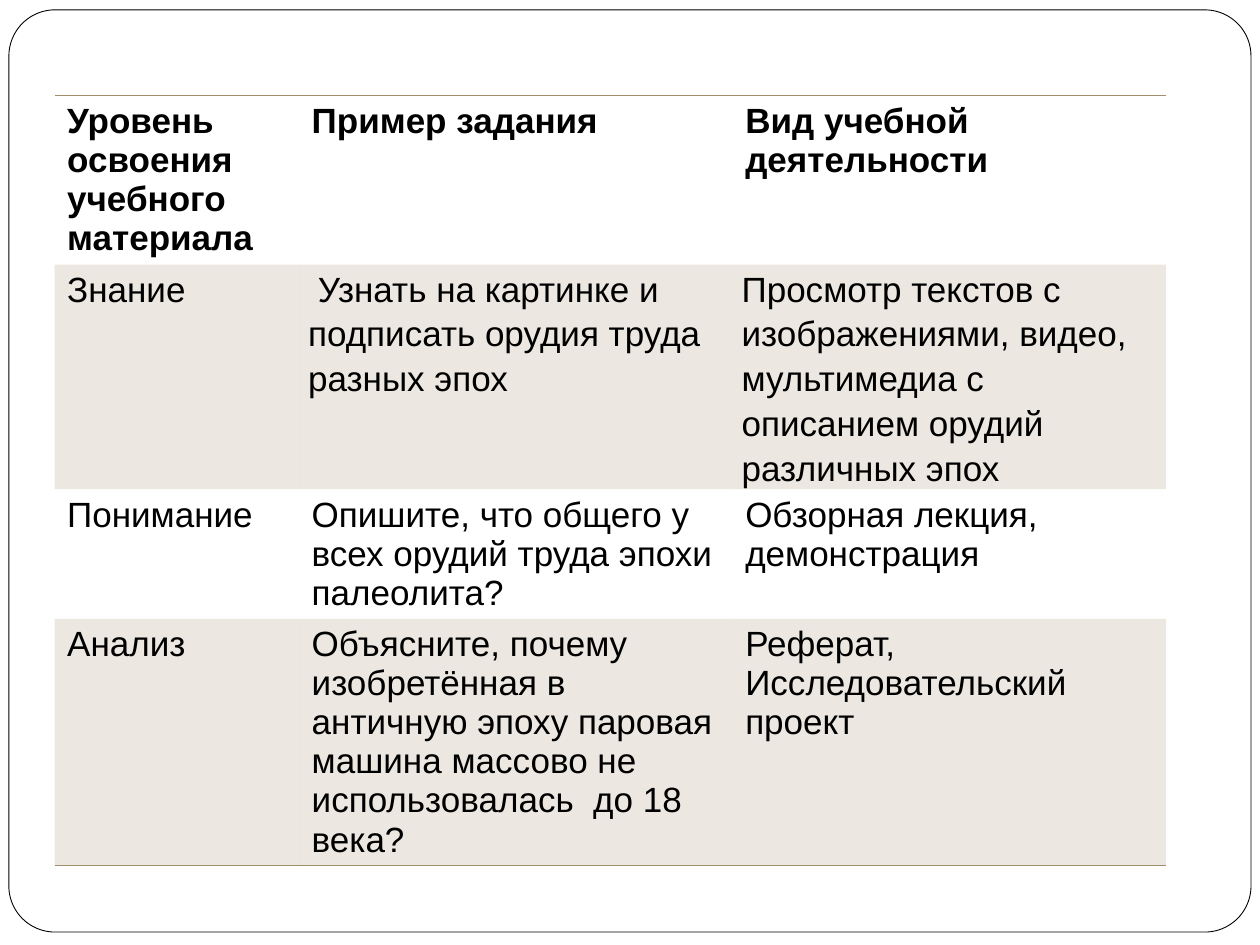
"""Build a slide with a table of learning levels, sample tasks and activities."""
import dataclasses

import pptx
import pptx.dml.color
import pptx.enum.shapes
import pptx.oxml
import pptx.oxml.ns
import pptx.util

Cm = pptx.util.Cm
Pt = pptx.util.Pt


@dataclasses.dataclass(frozen=True)
class Theme:
    paper: str = "FFFFFF"
    ink: str = "000000"
    accent: str = "A28E6A"
    band_opacity: int = 20
    font: str = "Arial"
    text_size: int = 20
    frame_line: float = 0.5
    rule_line: float = 1


class SlideBuilder:
    def __init__(self, prs, theme):
        self.theme = theme
        self.slide = prs.slides.add_slide(prs.slide_layouts[6])

    def color(self, value):
        return pptx.dml.color.RGBColor.from_string(value)

    def frame(self, left, top, width, height, radius):
        sp = self.slide.shapes.add_shape(
            pptx.enum.shapes.MSO_SHAPE.ROUNDED_RECTANGLE,
            Cm(left), Cm(top), Cm(width), Cm(height))
        sp.adjustments[0] = radius
        sp.shadow.inherit = False
        sp.fill.solid()
        sp.fill.fore_color.rgb = self.color(self.theme.paper)
        sp.line.color.rgb = self.color(self.theme.ink)
        sp.line.width = Pt(self.theme.frame_line)

    def table(self, left, top, height, widths, heights, rows):
        gf = self.slide.shapes.add_table(
            len(rows), len(widths), Cm(left), Cm(top), Cm(sum(widths)), Cm(height))
        table = gf.table
        table.first_row = table.horz_banding = False
        for column, width in zip(table.columns, widths):
            column.width = Cm(width)
        for row, row_height in zip(table.rows, heights):
            row.height = Cm(row_height)
        gf.height = Cm(height)
        last = len(rows) - 1
        for i, texts in enumerate(rows):
            for j, text in enumerate(texts):
                cell = table.cell(i, j)
                self.cell_text(cell, text, bold=i == 0)
                self.cell_fill(cell, banded=i % 2 == 1)
                self.cell_borders(cell, {"T": i == 0, "B": i in (0, last),
                                         "L": False, "R": False})
        return table

    def cell_text(self, cell, text, bold):
        cell.text_frame.text = text
        for p in cell.text_frame.paragraphs:
            p.font.name = self.theme.font
            p.font.size = Pt(self.theme.text_size)
            p.font.bold = bold
            p.font.color.rgb = self.color(self.theme.ink)

    def cell_fill(self, cell, banded):
        if not banded:
            cell.fill.background()
            return
        cell.fill.solid()
        cell.fill.fore_color.rgb = self.color(self.theme.accent)
        clr = cell._tc.tcPr.find(".//" + pptx.oxml.ns.qn("a:srgbClr"))
        alpha = clr.makeelement(pptx.oxml.ns.qn("a:alpha"),
                                {"val": str(self.theme.band_opacity * 1000)})
        clr.append(alpha)

    def cell_borders(self, cell, sides):
        for k, side in enumerate("LRTB"):
            paint = (f'<a:solidFill><a:srgbClr val="{self.theme.accent}"/></a:solidFill>'
                     if sides[side] else "<a:noFill/>")
            ln = pptx.oxml.parse_xml(
                f'<a:ln{side} {pptx.oxml.ns.nsdecls("a")} '
                f'w="{Pt(self.theme.rule_line)}">{paint}</a:ln{side}>')
            cell._tc.get_or_add_tcPr().insert(k, ln)

    def loosen(self, cell, side_margin, spacing):
        cell.margin_left = cell.margin_right = Cm(side_margin)
        cell.margin_top = cell.margin_bottom = 0
        for p in cell.text_frame.paragraphs:
            p.line_spacing = spacing


ROWS = [
    ("Уровень освоения учебного материала", "Пример задания",
     "Вид учебной деятельности"),
    ("Знание", " Узнать на картинке и подписать орудия труда разных эпох",
     "Просмотр текстов с изображениями, видео, мультимедиа с описанием орудий "
     "различных эпох"),
    ("Понимание", "Опишите, что общего у всех орудий труда эпохи палеолита?",
     "Обзорная лекция,\vдемонстрация"),
    ("Анализ",
     "Объясните, почему  изобретённая в античную эпоху паровая машина массово "
     "не использовалась  до 18 века?",
     "Реферат,\nИсследовательский проект"),
]


def main():
    prs = pptx.Presentation()
    prs.slide_width, prs.slide_height = Cm(25.4), Cm(19.05)
    s = SlideBuilder(prs, Theme())
    s.frame(0.18, 0.2, 25.04, 18.59, radius=0.05)
    table = s.table(1.1, 1.93, 16.64, widths=(4.93, 8.74, 8.74),
                    heights=(2.51, 2.51, 2.51, 3.63), rows=ROWS)
    for column in (1, 2):
        s.loosen(table.cell(1, column), side_margin=0.18, spacing=1.15)
    prs.save("out.pptx")


if __name__ == "__main__":
    main()
